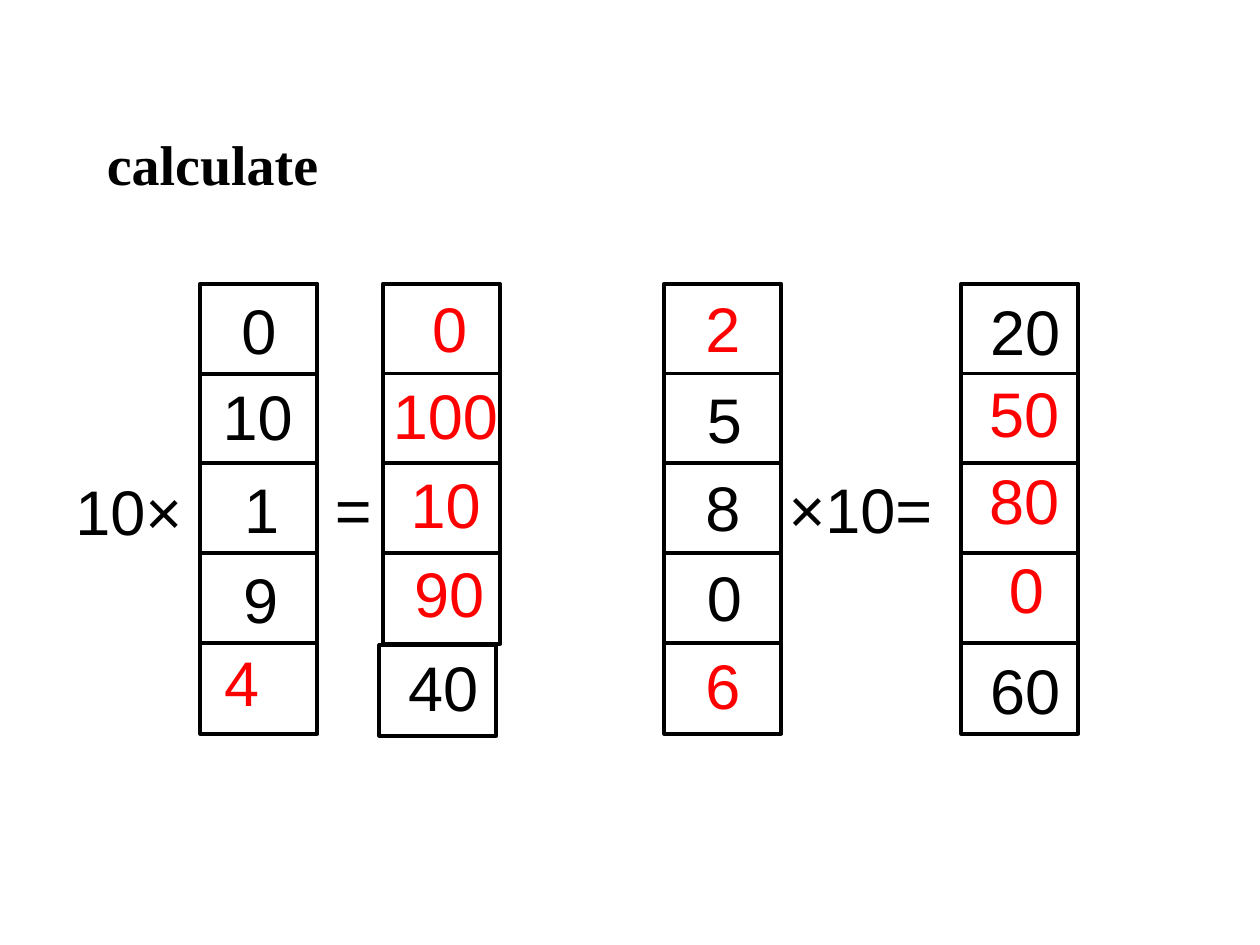
from pptx import Presentation
from pptx.dml.color import RGBColor
from pptx.enum.shapes import MSO_SHAPE
from pptx.enum.text import MSO_ANCHOR, MSO_AUTO_SIZE, PP_ALIGN
from pptx.util import Cm, Pt

RECT = MSO_SHAPE.RECTANGLE
MIDDLE = MSO_ANCHOR.MIDDLE
LEFT, CENTER = PP_ALIGN.LEFT, PP_ALIGN.CENTER
FIT_SHAPE = MSO_AUTO_SIZE.SHAPE_TO_FIT_TEXT
COLORS = {"ink": "000000", "paper": "FFFFFF", "answer": "FF0000"}

# Grid of boxes, in cm
BOX_W, BOX_H = 2.36, 1.83
TOP, PITCH = 5.72, 1.81


def add_run(p, text, color="ink", font="Arial", size=36):
    r = p.add_run()
    r.text = text
    r.font.name = font
    r.font.size = Pt(size)
    r.font.color.rgb = RGBColor.from_string(COLORS[color])
    return r


def add_box(shapes, x, y):
    sp = shapes.add_shape(RECT, Cm(x), Cm(y), Cm(BOX_W), Cm(BOX_H))
    sp.shadow.inherit = False
    sp.fill.solid()
    sp.fill.fore_color.rgb = RGBColor.from_string(COLORS["paper"])
    sp.line.color.rgb = RGBColor.from_string(COLORS["ink"])
    sp.line.width = Pt(2.25)
    return sp


prs = Presentation()
prs.slide_width, prs.slide_height = Cm(25.4), Cm(19.05)
s = prs.slides.add_slide(prs.slide_layouts[5])

# Title
title = s.shapes.title
title.left, title.top, title.width, title.height = Cm(1.9), Cm(1.7), Cm(21.6), Cm(3.18)
tf = title.text_frame
tf.vertical_anchor = MIDDLE
p = tf.paragraphs[0]
p.alignment = LEFT
add_run(p, "calculate", font="Times New Roman", size=32).font.bold = True

# Boxes: the second one on the left lies behind its neighbours
rows = [TOP + i * PITCH for i in range(5)]
add_box(s.shapes, 4.04, rows[1])
left_group = s.shapes.add_group_shape()
right_group = s.shapes.add_group_shape()

first = add_box(left_group.shapes, 4.04, rows[0])
tf = first.text_frame
tf.word_wrap = False
tf.vertical_anchor = MIDDLE
p = tf.paragraphs[0]
p.alignment = CENTER
add_run(p, "0")

columns = [
    (left_group, 4.04, rows[2:]),
    (left_group, 7.72, rows[:4]),
    (left_group, 7.65, [13.0]),
    (right_group, 13.39, rows),
    (right_group, 19.38, rows),
]
for group, x, tops in columns:
    for y in tops:
        add_box(group.shapes, x, y)

# Given numbers and signs, then answers: text, left, top, width
left_given = [
    ("10×", 1.27, 9.4, 3.35), ("=", 6.5, 9.37, 1.8), ("10", 4.24, 7.49, 2.08),
    ("1", 4.67, 9.37, 2.08), ("9", 4.65, 11.18, 2.08), ("40", 7.98, 12.95, 2.08),
]
right_given = [
    ("×10=", 15.65, 9.37, 4.06), ("20", 19.71, 5.77, 2.08), ("60", 19.71, 13.0, 2.08),
    ("5", 14.0, 7.54, 1.45), ("8", 13.97, 9.32, 2.08), ("0", 14.0, 11.13, 2.08),
]
answers = [
    ("0", 8.46, 5.72, 2.31), ("100", 7.67, 7.47, 2.79), ("10", 8.03, 9.25, 2.31),
    ("90", 8.1, 11.05, 2.31), ("4", 4.27, 12.85, 1.65), ("50", 19.69, 7.42, 2.79),
    ("80", 19.69, 9.17, 2.31), ("0", 20.09, 10.97, 2.31), ("2", 13.97, 5.72, 2.31),
    ("6", 13.97, 12.9, 2.31),
]
for shapes, color, labels in [
    (left_group.shapes, "ink", left_given),
    (right_group.shapes, "ink", right_given),
    (s.shapes, "answer", answers),
]:
    for text, x, y, w in labels:
        tf = shapes.add_textbox(Cm(x), Cm(y), Cm(w), Cm(1.8)).text_frame
        tf.word_wrap = True
        tf.auto_size = FIT_SHAPE
        add_run(tf.paragraphs[0], text, color)

prs.save("out.pptx")
